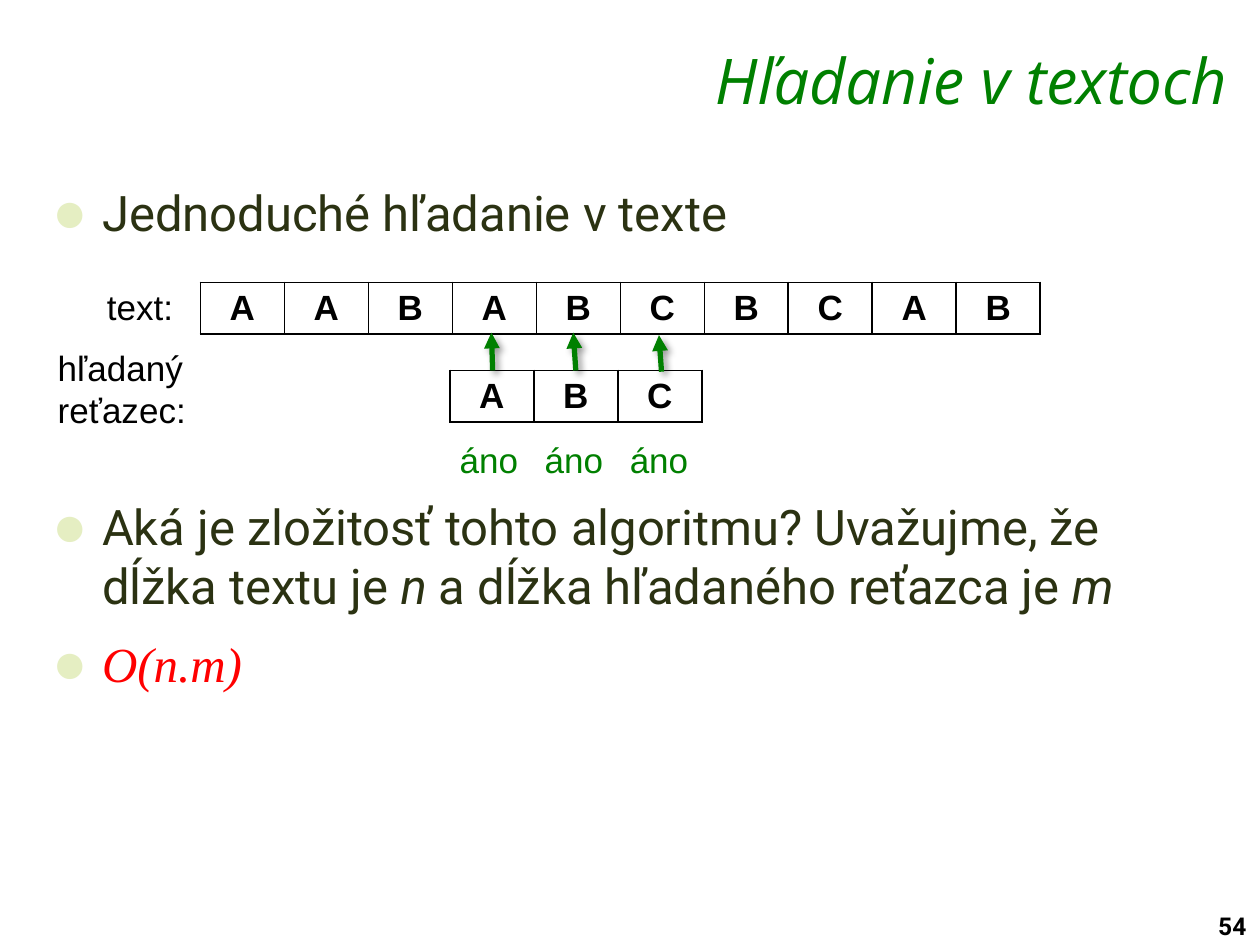
from dataclasses import dataclass

from lxml.etree import SubElement
from pptx import Presentation
from pptx.dml.color import RGBColor
from pptx.enum.shapes import MSO_CONNECTOR
from pptx.enum.text import MSO_ANCHOR, MSO_AUTO_SIZE, PP_ALIGN
from pptx.oxml.ns import qn
from pptx.slide import Slide
from pptx.util import Inches, Pt


@dataclass(frozen=True)
class Theme:
    title_color: str = "008000"
    body_color: str = "2B3212"
    bullet_color: str = "E5EEC2"
    answer_color: str = "FF0000"
    black: str = "000000"
    white: str = "FFFFFF"
    title_font: str = "Open Sans"
    body_font: str = "Roboto"
    label_font: str = "Arial"
    formula_font: str = "Times New Roman"
    title_size: int = 36
    body_size: int = 28
    label_size: int = 20
    number_size: int = 14


@dataclass(frozen=True)
class Label:
    text: str
    left: float
    top: float
    width: float
    height: float = 0.44
    color: str = Theme.black
    font: str = Theme.label_font
    size: int = Theme.label_size
    bold: bool = False


@dataclass(frozen=True)
class LetterRow:
    letters: str
    left: float
    top: float


@dataclass(frozen=True)
class Arrow:
    start: tuple[float, float]
    end: tuple[float, float]


@dataclass(frozen=True)
class Bullet:
    """Runs are (text, italic) pairs; before is the space above in points."""
    runs: tuple[tuple[str, bool], ...]
    before: float
    color: str = Theme.body_color
    font: str = Theme.body_font


THEME = Theme()
CELL_WIDTH = 2 / 3
ROW_HEIGHT = 0.41
GAP = 5.6
DIAGRAM_GAP = 140

BULLETS = (
    Bullet((("Jednoduché hľadanie v texte", False),), 0),
    Bullet((("Aká je zložitosť tohto algoritmu? Uvažujme, že dĺžka textu je ", False),
            ("n", True), (" a dĺžka hľadaného reťazca je ", False), ("m", True)), DIAGRAM_GAP),
    Bullet((("O(n.m)", True),), GAP, THEME.answer_color, THEME.formula_font),
)
ROWS = (LetterRow("AABABCBCAB", 1.59, 2.24), LetterRow("ABC", 3.57, 2.94))
LABELS = (
    Label("text:", 0.75, 2.22, 0.73),
    Label("hľadaný\nreťazec:", 0.36, 2.7, 1.25, 0.77),
    *(Label("áno", 3.55 + 0.675 * i, 3.43, 0.67, color=THEME.title_color) for i in range(3)),
    Label("54", 9.57, 7.18, 0.51, 0.33, font=THEME.body_font, size=THEME.number_size, bold=True),
)
ARROWS = (
    Arrow((3.91, 2.94), (3.9, 2.64)),
    Arrow((4.57, 2.94), (4.55, 2.64)),
    Arrow((5.25, 2.95), (5.23, 2.66)),
)


def style_font(font, name: str, size: int, color: str, bold: bool = False, italic: bool = False) -> None:
    font.name, font.size, font.bold, font.italic = name, Pt(size), bold, italic
    font.color.rgb = RGBColor.from_string(color)


def place(shape, left: float, top: float, width: float, height: float) -> None:
    shape.left, shape.top = Inches(left), Inches(top)
    shape.width, shape.height = Inches(width), Inches(height)


def fill_title(slide: Slide, text: str) -> None:
    title = slide.shapes.title
    place(title, 2.29, 0.31, 7.55, 0.58)
    frame = title.text_frame
    frame.text = text
    frame.auto_size = MSO_AUTO_SIZE.NONE
    frame.vertical_anchor = MSO_ANCHOR.TOP
    frame.margin_top = frame.margin_bottom = Inches(0.02)
    frame.paragraphs[0].alignment = PP_ALIGN.RIGHT
    style_font(frame.paragraphs[0].runs[0].font, THEME.title_font, THEME.title_size,
               THEME.title_color, italic=True)


def add_bullet_mark(paragraph) -> None:
    properties = paragraph._p.get_or_add_pPr()
    properties.set("marL", str(Inches(0.39)))
    properties.set("indent", str(-Inches(0.39)))
    color = SubElement(properties, qn("a:buClr"))
    SubElement(color, qn("a:srgbClr"), val=THEME.bullet_color)
    SubElement(properties, qn("a:buSzPct"), val="120000")
    SubElement(properties, qn("a:buFont"), typeface=THEME.label_font)
    SubElement(properties, qn("a:buChar"), char="●")


def fill_body(slide: Slide, bullets: tuple[Bullet, ...]) -> None:
    body = slide.placeholders[1]
    place(body, 0.32, 1.4, 9.38, 5.8)
    frame = body.text_frame
    frame.auto_size = MSO_AUTO_SIZE.NONE
    for index, bullet in enumerate(bullets):
        paragraph = frame.paragraphs[0] if index == 0 else frame.add_paragraph()
        add_bullet_mark(paragraph)
        paragraph.space_before, paragraph.space_after = Pt(bullet.before), Pt(GAP)
        for text, italic in bullet.runs:
            run = paragraph.add_run()
            run.text = text
            style_font(run.font, bullet.font, THEME.body_size, bullet.color, italic=italic)


def add_borders(cell) -> None:
    properties = cell._tc.get_or_add_tcPr()
    for position, side in enumerate(("a:lnL", "a:lnR", "a:lnT", "a:lnB")):
        line = properties.makeelement(qn(side), {"w": str(Pt(1))})
        fill = SubElement(line, qn("a:solidFill"))
        SubElement(fill, qn("a:srgbClr"), val=THEME.black)
        properties.insert(position, line)


def add_letter_row(slide: Slide, row: LetterRow) -> None:
    count = len(row.letters)
    table = slide.shapes.add_table(1, count, Inches(row.left), Inches(row.top),
                                   Inches(CELL_WIDTH * count), Inches(ROW_HEIGHT)).table
    table.first_row = table.horz_banding = False
    for column, letter in enumerate(row.letters):
        table.columns[column].width = Inches(CELL_WIDTH)
        cell = table.cell(0, column)
        cell.text = letter
        cell.margin_top = cell.margin_bottom = Inches(0.04)
        cell.vertical_anchor = MSO_ANCHOR.MIDDLE
        cell.fill.solid()
        cell.fill.fore_color.rgb = RGBColor.from_string(THEME.white)
        add_borders(cell)
        paragraph = cell.text_frame.paragraphs[0]
        paragraph.alignment = PP_ALIGN.CENTER
        style_font(paragraph.runs[0].font, THEME.label_font, THEME.label_size, THEME.black, bold=True)


def add_label(slide: Slide, label: Label) -> None:
    box = slide.shapes.add_textbox(Inches(label.left), Inches(label.top),
                                   Inches(label.width), Inches(label.height))
    box.text_frame.text = label.text
    for paragraph in box.text_frame.paragraphs:
        style_font(paragraph.runs[0].font, label.font, label.size, label.color, label.bold)


def add_arrow(slide: Slide, arrow: Arrow) -> None:
    connector = slide.shapes.add_connector(
        MSO_CONNECTOR.STRAIGHT, *(Inches(value) for value in arrow.start + arrow.end))
    connector.line.width = Pt(3)
    connector.line.color.rgb = RGBColor.from_string(THEME.title_color)
    SubElement(connector.line._get_or_add_ln(), qn("a:tailEnd"), type="triangle")
    effects = SubElement(connector._element.spPr, qn("a:effectLst"))
    shadow = SubElement(effects, qn("a:outerShdw"), blurRad=str(Pt(4)), dist=str(Pt(3)),
                        dir=str(45 * 60000), algn="tl", rotWithShape="0")
    color = SubElement(shadow, qn("a:srgbClr"), val=THEME.black)
    SubElement(color, qn("a:alpha"), val="40000")


def main() -> None:
    presentation = Presentation()
    presentation.slide_width, presentation.slide_height = Inches(10), Inches(7.5)
    slide = presentation.slides.add_slide(presentation.slide_layouts[1])
    fill_title(slide, "Hľadanie v textoch")
    fill_body(slide, BULLETS)
    for row in ROWS:
        add_letter_row(slide, row)
    for label in LABELS:
        add_label(slide, label)
    for arrow in ARROWS:
        add_arrow(slide, arrow)
    presentation.save("out.pptx")


if __name__ == "__main__":
    main()
